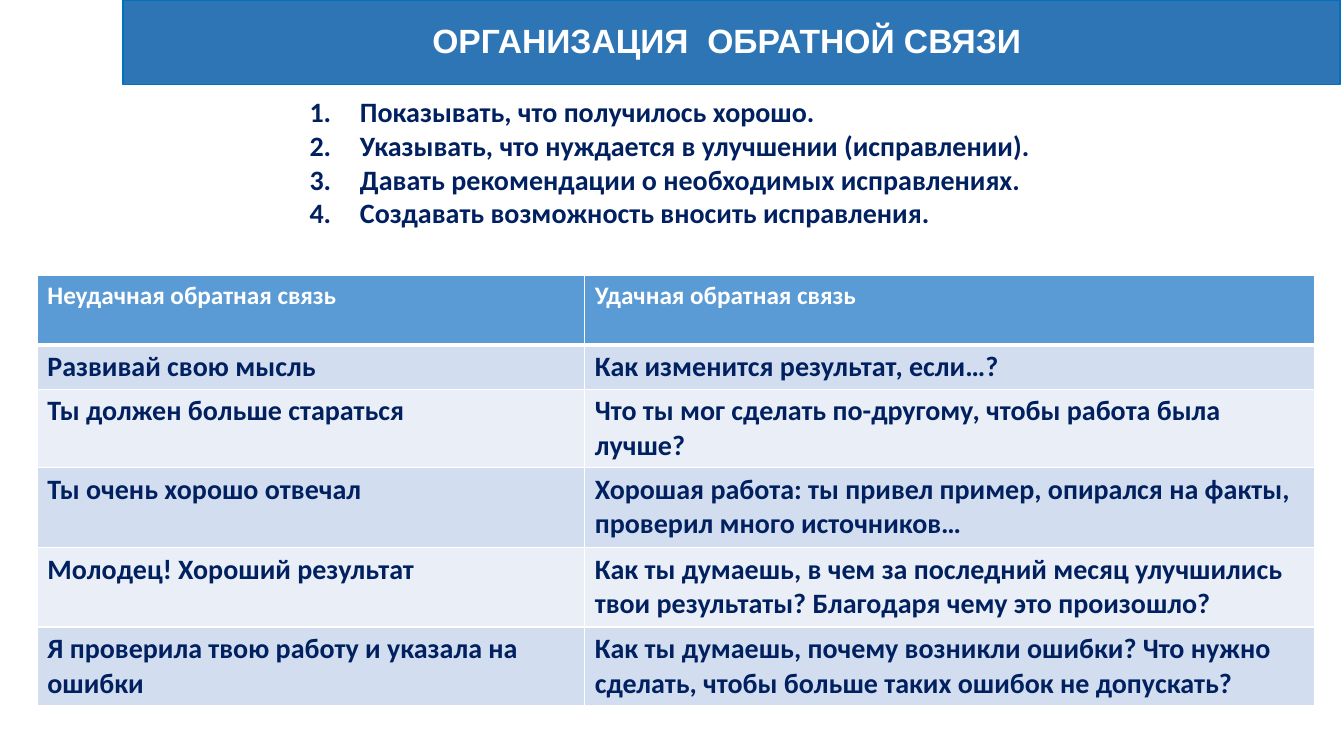
from lxml import etree
from pptx import Presentation
from pptx.dml.color import RGBColor
from pptx.enum.text import MSO_ANCHOR, MSO_AUTO_SIZE, PP_ALIGN
from pptx.oxml.ns import qn
from pptx.util import Inches, Pt

LEFT, CENTER = PP_ALIGN.LEFT, PP_ALIGN.CENTER
TOP, MIDDLE = MSO_ANCHOR.TOP, MSO_ANCHOR.MIDDLE
FIXED = MSO_AUTO_SIZE.NONE

COLORS = {
    "white": "FFFFFF",
    "navy": "002060",
    "banner": "2E75B6",
    "edge": "0070C0",
    "head": "5B9BD5",
    "dark": "D2DEEF",
    "light": "EAEFF7",
}

TITLE = "ОРГАНИЗАЦИЯ  ОБРАТНОЙ СВЯЗИ "
STEPS = [
    "Показывать, что получилось хорошо.",
    "Указывать, что нуждается в улучшении (исправлении).",
    "Давать рекомендации о необходимых исправлениях.",
    "Создавать возможность вносить исправления.",
]
ROWS = [
    ("Неудачная обратная связь", "Удачная обратная связь"),
    ("Развивай свою мысль", "Как изменится результат, если…?"),
    ("Ты должен больше стараться",
     "Что ты мог сделать по-другому, чтобы работа была лучше?"),
    ("Ты очень хорошо отвечал",
     "Хорошая работа: ты привел пример, опирался на факты, "
     "проверил много источников…"),
    ("Молодец! Хороший результат",
     "Как ты думаешь, в чем за последний месяц улучшились твои результаты? "
     "Благодаря чему это произошло?"),
    ("Я проверила твою работу и указала на ошибки",
     "Как ты думаешь, почему возникли ошибки? Что нужно сделать, "
     "чтобы больше таких ошибок не допускать?"),
]
WIDTHS = [5.43, 7.24]
HEIGHTS = [0.69, 0.4, 0.69, 0.79, 0.79, 0.77]


def color(name):
    return RGBColor.from_string(COLORS[name])


def write(par, text, size=20, font="Calibri", ink="navy", align=LEFT, lead=1.0):
    par.alignment = align
    par.line_spacing = lead
    par.space_before = Pt(0)
    run = par.add_run()
    run.text = text
    run.font.size = Pt(size)
    run.font.name = font
    run.font.bold = True
    run.font.color.rgb = color(ink)


class Deck:
    def __init__(self):
        self.show = Presentation()
        self.show.slide_width = Inches(13.33)
        self.show.slide_height = Inches(7.5)
        self.slide = self.show.slides.add_slide(self.show.slide_layouts[1])

    def place(self, shape, box, anchor):
        shape.left, shape.top, shape.width, shape.height = map(Inches, box)
        frame = shape.text_frame
        frame.word_wrap = True
        frame.auto_size = FIXED
        frame.vertical_anchor = anchor
        return frame

    def title(self, text, box):
        shape = self.slide.shapes.title
        frame = self.place(shape, box, MIDDLE)
        shape.fill.solid()
        shape.fill.fore_color.rgb = color("banner")
        shape.line.color.rgb = color("edge")
        shape.line.width = Pt(1)
        write(frame.paragraphs[0], text, size=24, font="Arial",
              ink="white", align=CENTER, lead=0.9)

    def steps(self, items, box):
        frame = self.place(self.slide.placeholders[1], box, TOP)
        for num, item in enumerate(items):
            par = frame.add_paragraph() if num else frame.paragraphs[0]
            write(par, item)
            props = par._p.get_or_add_pPr()
            props.set("marL", str(Inches(0.5)))
            props.set("indent", str(-Inches(0.5)))
            etree.SubElement(props, qn("a:buFont"), typeface="Calibri")
            etree.SubElement(props, qn("a:buAutoNum"), type="arabicPeriod")

    def border(self, cell, top, base):
        props = cell._tc.get_or_add_tcPr()
        for side, width in (("L", 1), ("R", 1), ("T", top), ("B", base)):
            line = etree.SubElement(props, qn(f"a:ln{side}"), w=str(Pt(width)))
            fill = etree.SubElement(line, qn("a:solidFill"))
            etree.SubElement(fill, qn("a:srgbClr"), val=COLORS["white"])

    def table(self, rows, widths, heights, left, top):
        size = Inches(sum(widths)), Inches(sum(heights))
        table = self.slide.shapes.add_table(
            len(rows), len(widths), Inches(left), Inches(top), *size).table
        for col, width in zip(table.columns, widths):
            col.width = Inches(width)
        for num, (row, height) in enumerate(zip(rows, heights)):
            table.rows[num].height = Inches(height)
            tint = ("dark" if num % 2 else "light") if num else "head"
            look = {} if num else {"size": 18, "ink": "white"}
            for col, text in enumerate(row):
                cell = table.cell(num, col)
                self.border(cell, 3 if num == 1 else 1, 1 if num else 3)
                cell.fill.solid()
                cell.fill.fore_color.rgb = color(tint)
                write(cell.text_frame.paragraphs[0], text, **look)


def main():
    deck = Deck()
    deck.title(TITLE, (1.22, 0, 12.07, 0.84))
    deck.steps(STEPS, (2.97, 0.89, 7.72, 1.45))
    deck.table(ROWS, WIDTHS, HEIGHTS, 0.37, 2.73)
    deck.show.save("out.pptx")


if __name__ == "__main__":
    main()
